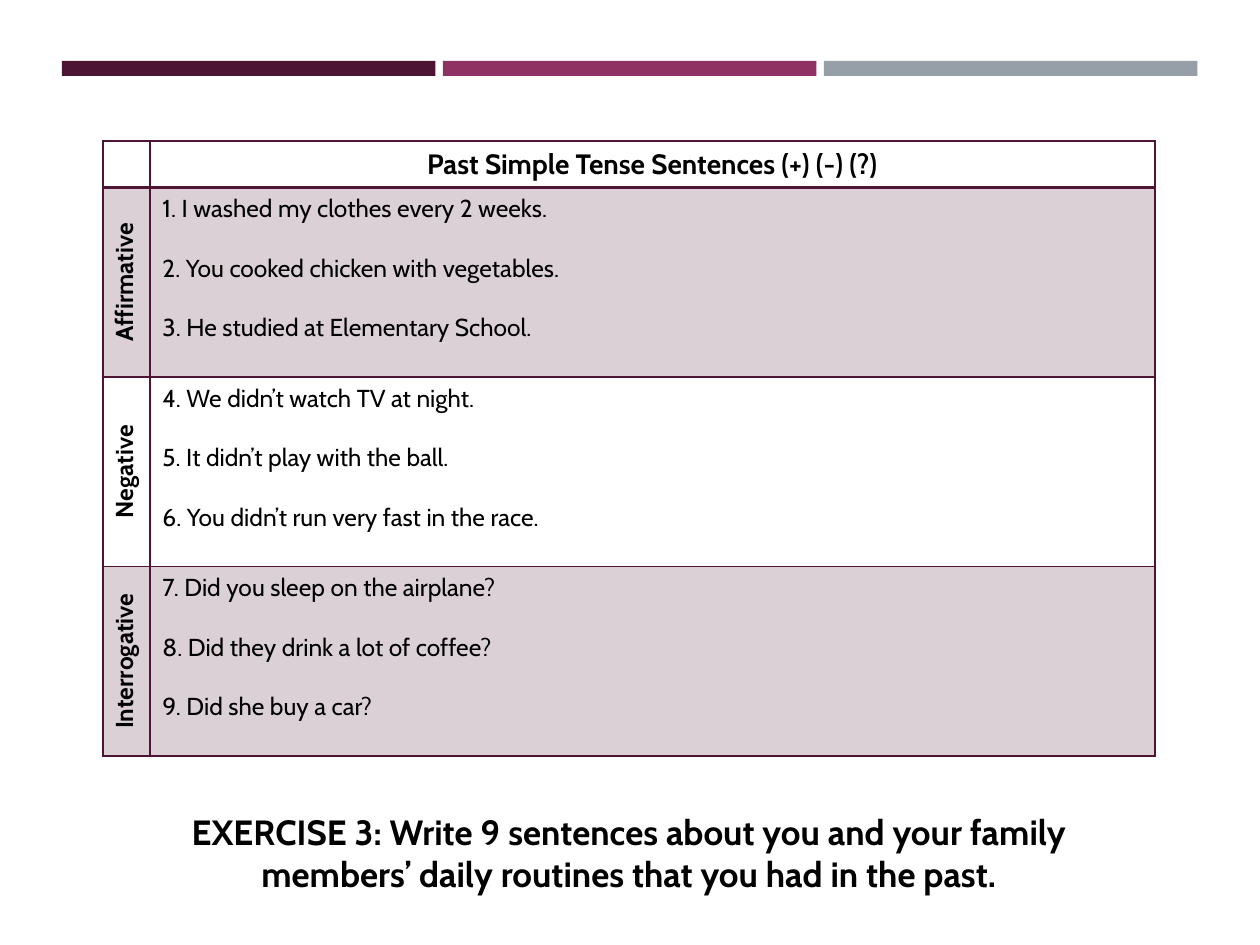
from typing import NamedTuple

from lxml import etree
from pptx import Presentation
from pptx import util as u
from pptx.dml.color import RGBColor
from pptx.enum import shapes, text
from pptx.oxml.ns import qn

HUES = {"plum": "4D1434", "rose": "903163", "gray": "969FA7", "ink": "000000"}
FONT = "Cabin"
Align, Anchor = text.PP_ALIGN, text.MSO_ANCHOR
LEFT, WIDTH = 2.08, 21.2
BAR_W, BAR_STEP = 7.53, 7.68
HEAD_H, ROW_H = 0.94, 3.82


class Group(NamedTuple):
    label: str
    lines: list[str]
    shade: bool


GROUPS = [
    Group("Affirmative", ["1. I washed my clothes every 2 weeks.",
                          "2. You cooked chicken with vegetables.",
                          "3. He studied at Elementary School."], True),
    Group("Negative", ["4. We didn’t watch TV at night.",
                       "5. It didn’t play with the ball.",
                       "6. You didn’t run very fast in the race."], False),
    Group("Interrogative", ["7. Did you sleep on the airplane?",
                            "8. Did they drink a lot of coffee?",
                            "9. Did she buy a car?"], True),
]


def rgb(name: str) -> RGBColor:
    return RGBColor.from_string(HUES[name])


def write(frame, lines: list[str], size: int, bold: bool, align, gap: int = 0) -> None:
    """Fill a text frame, one paragraph a line, with gap points between them."""
    for i, line in enumerate(lines):
        para = frame.paragraphs[0] if i == 0 else frame.add_paragraph()
        para.text = line
        para.alignment = align
        para.space_before = u.Pt(gap if i else 0)
        font = para.font
        font.name, font.size, font.bold = FONT, u.Pt(size), bold
        font.color.rgb = rgb("ink")


def edge(cell, **widths: float) -> None:
    """Draw the cell's borders, given in points by side: L, R, T, B."""
    props = cell._tc.get_or_add_tcPr()
    for i, (side, width) in enumerate(widths.items()):
        line = etree.Element(qn(f"a:ln{side}"), w=str(u.Pt(width)))
        fill = etree.SubElement(line, qn("a:solidFill"))
        etree.SubElement(fill, qn("a:srgbClr"), val=HUES["plum"])
        props.insert(i, line)


def tint(cell, shade: bool) -> None:
    """Fill the cell with 20 % plum, or leave it clear."""
    if not shade:
        cell.fill.background()
        return
    cell.fill.solid()
    cell.fill.fore_color.rgb = rgb("plum")
    color = cell._tc.tcPr.find(".//" + qn("a:srgbClr"))
    etree.SubElement(color, qn("a:alpha"), val="20000")


def add_bars(slide) -> None:
    for i, hue in enumerate(["plum", "rose", "gray"]):
        bar = slide.shapes.add_shape(
            shapes.MSO_SHAPE.RECTANGLE, u.Cm(1.25 + i * BAR_STEP), u.Cm(1.23),
            u.Cm(BAR_W), u.Cm(0.3))
        bar.shadow.inherit = False
        bar.fill.solid()
        bar.fill.fore_color.rgb = rgb(hue)
        bar.line.fill.background()


def add_grid(slide) -> None:
    grid = slide.shapes.add_table(
        len(GROUPS) + 1, 2, u.Cm(LEFT), u.Cm(2.84), u.Cm(WIDTH),
        u.Cm(HEAD_H + ROW_H * len(GROUPS))).table
    grid.first_row = grid.horz_banding = False
    grid.columns[0].width = u.Cm(0.94)
    grid.columns[1].width = u.Cm(WIDTH - 0.94)
    for i, row in enumerate(grid.rows):
        row.height = u.Cm(ROW_H if i else HEAD_H)
        for cell in row.cells:
            tint(cell, i > 0 and GROUPS[i - 1].shade)
            edge(cell, L=1, R=1, T=2 if i == 1 else 1, B=1 if i else 2)

    write(grid.cell(0, 0).text_frame, [""], 14, True, Align.CENTER)
    write(grid.cell(0, 1).text_frame, ["Past Simple Tense Sentences (+) (-) (?)"],
          16, True, Align.CENTER)
    for i, group in enumerate(GROUPS, 1):
        label, body = grid.rows[i].cells
        write(label.text_frame, [group.label], 14, True, Align.CENTER)
        label._tc.tcPr.set("vert", "vert270")
        write(body.text_frame, group.lines, 14, False, Align.JUSTIFY, gap=17)


def add_task(slide) -> None:
    box = slide.shapes.add_textbox(u.Cm(LEFT), u.Cm(16.13), u.Cm(WIDTH), u.Cm(2.13))
    frame = box.text_frame
    frame.word_wrap = True
    frame.vertical_anchor = Anchor.MIDDLE
    write(frame, ["EXERCISE 3: Write 9 sentences about you and your family "
                  "members’ daily routines that you had in the past."],
          20, True, Align.CENTER)


def main() -> None:
    deck = Presentation()
    deck.slide_width, deck.slide_height = u.Cm(25.4), u.Cm(19.05)
    slide = deck.slides.add_slide(deck.slide_layouts[6])
    add_bars(slide)
    add_task(slide)
    add_grid(slide)
    deck.save("out.pptx")


if __name__ == "__main__":
    main()
